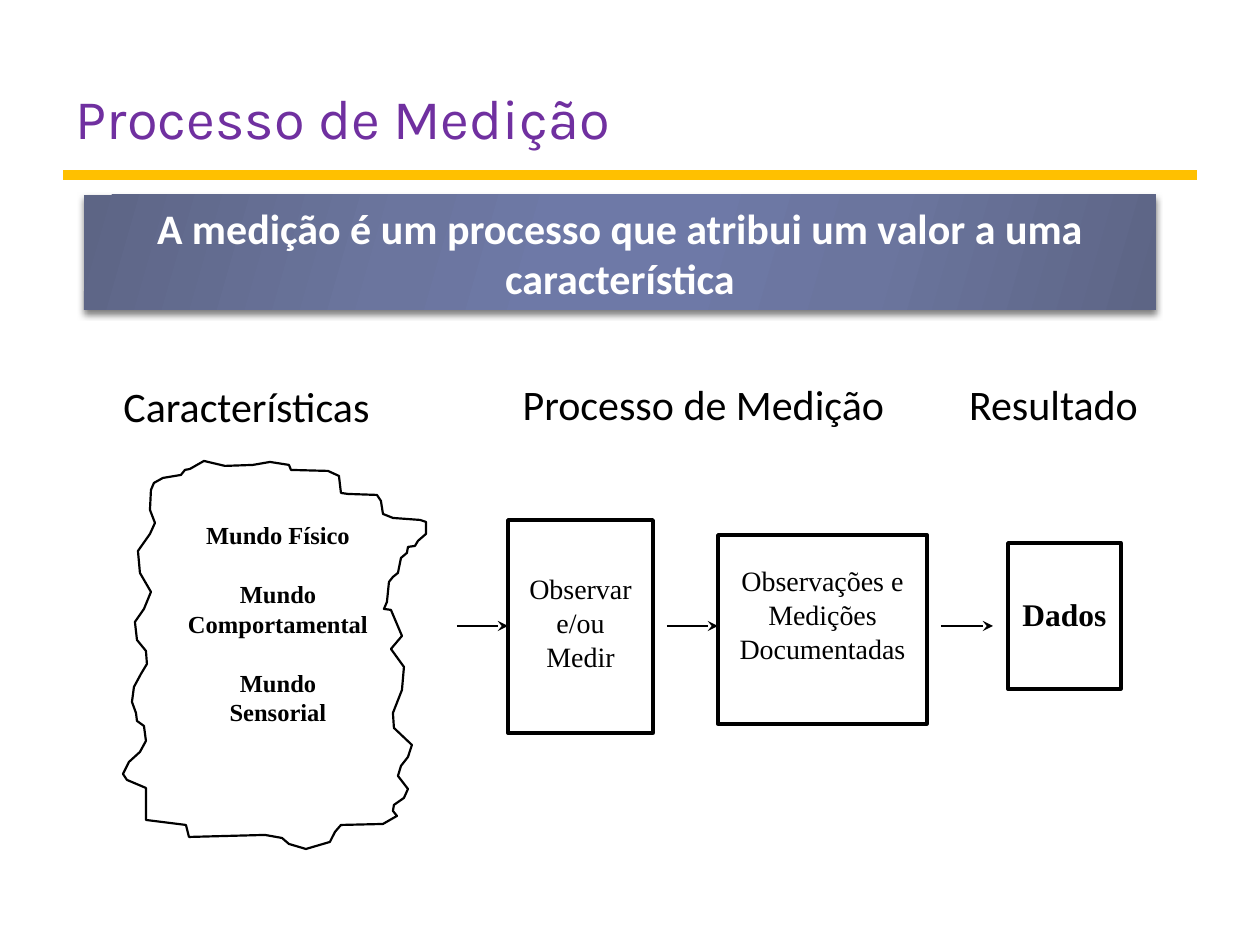
"""Build the slide "Processo de Medição": a diagram from characteristics to data."""
from lxml.etree import SubElement
from pptx import Presentation
from pptx.dml.color import RGBColor
from pptx.enum.shapes import MSO_CONNECTOR, MSO_SHAPE
from pptx.enum.text import MSO_ANCHOR, PP_ALIGN
from pptx.oxml import parse_xml
from pptx.oxml.ns import nsdecls, qn
from pptx.util import Emu, Pt


def px(length):
    return Emu(round(length * 914400 / 126))


def write(shape, lines, size, font, color="000000", bold=False, align=PP_ALIGN.CENTER,
          anchor=MSO_ANCHOR.TOP, top=6, gaps=()):
    frame = shape.text_frame
    frame.word_wrap = True
    frame.vertical_anchor = anchor
    frame.margin_left = frame.margin_right = px(13)
    frame.margin_top, frame.margin_bottom = px(top), px(6)
    frame.text = "\n".join(lines)
    for index, paragraph in enumerate(frame.paragraphs):
        paragraph.alignment = align
        paragraph.font.size = Pt(size)
        paragraph.font.name = font
        paragraph.font.bold = bold
        paragraph.font.color.rgb = RGBColor.from_string(color)
        if index in gaps:
            paragraph.space_before = Pt(17)


presentation = Presentation()
presentation.slide_width, presentation.slide_height = px(1260), px(945)
slide = presentation.slides.add_slide(presentation.slide_layouts[6])
shapes = slide.shapes

title = shapes.add_textbox(px(63), px(31), px(1134), px(126))
write(title, ["Processo de Medição"], 32, "Karla", "7030A0",
      align=PP_ALIGN.LEFT, anchor=MSO_ANCHOR.BOTTOM)

OUTLINE = [
    (151, 490), (154, 483), (163, 478), (181, 475), (185, 470), (190, 469), (204, 461),
    (225, 466), (253, 465), (270, 462), (289, 465), (291, 470), (328, 471), (339, 476),
    (341, 493), (348, 494), (377, 495), (381, 501), (383, 514), (393, 518), (420, 520),
    (426, 522), (426, 534), (418, 541), (415, 546), (408, 547), (407, 553), (401, 558),
    (398, 573), (393, 577), (389, 582), (387, 602), (384, 609), (391, 610), (402, 636),
    (391, 649), (404, 667), (402, 690), (393, 713), (394, 728), (412, 745), (408, 757),
    (401, 766), (398, 776), (408, 789), (404, 798), (394, 805), (393, 811), (397, 816),
    (383, 824), (341, 825), (335, 832), (330, 842), (306, 849), (289, 844), (282, 838),
    (265, 835), (189, 837), (186, 825), (146, 820), (146, 788), (127, 780), (123, 774),
    (129, 762), (140, 752), (146, 741), (144, 726), (137, 721), (136, 713), (132, 702),
    (134, 687), (141, 674), (144, 669), (147, 664), (146, 651), (137, 640), (135, 622),
    (144, 609), (151, 592), (140, 573), (138, 551), (150, 534), (155, 523), (150, 510),
]
builder = shapes.build_freeform(*OUTLINE[0], scale=914400 / 126)
builder.add_line_segments(OUTLINE[1:], close=True)
world = builder.convert_to_shape()
world.shadow.inherit = False
world.fill.background()
world.line.color.rgb = RGBColor.from_string("000000")
world.line.width = Pt(1.25)

worlds = shapes.add_textbox(px(169), px(485), px(218), px(330))
write(worlds, ["Mundo Físico", "Mundo", "Comportamental", "Mundo", "Sensorial"],
      14, "Times New Roman", bold=True, top=35, gaps=(1, 3))

for left, top, width, height, text, size, bold, inset in [
    (508, 520, 145, 213, "Observar e/ou Medir", 16, False, 52),
    (718, 535, 209, 189, "Observações e Medições Documentadas", 16, False, 29),
    (1008, 543, 113, 146, "Dados", 18, True, 52),
]:
    step = shapes.add_shape(MSO_SHAPE.RECTANGLE, px(left), px(top), px(width), px(height))
    step.shadow.inherit = False
    step.fill.solid()
    step.fill.fore_color.rgb = RGBColor.from_string("FFFFFF")
    step.line.color.rgb = RGBColor.from_string("000000")
    step.line.width = Pt(2)
    write(step, [text], size, "Times New Roman", bold=bold, top=inset)

for start, end, y, color, width, arrow in [
    (63, 1197, 175, "FFC000", 6, False),
    (457, 508, 626, "000000", 1.25, True),
    (667, 718, 626, "000000", 1.25, True),
    (941, 993, 626, "000000", 1.25, True),
]:
    connector = shapes.add_connector(MSO_CONNECTOR.STRAIGHT, px(start), px(y), px(end), px(y))
    connector.line.color.rgb = RGBColor.from_string(color)
    connector.line.width = Pt(width)
    if arrow:
        SubElement(connector.line._get_or_add_ln(), qn("a:tailEnd"), type="stealth")
    SubElement(connector._element.spPr, qn("a:effectLst"))

banner = shapes.add_shape(MSO_SHAPE.RECTANGLE, px(84), px(195), px(1072), px(115))
banner.line.fill.background()
banner.shadow.inherit = False
stops = "".join(
    f'<a:gs pos="{position * 1000}"><a:srgbClr val="{color}"/></a:gs>'
    for position, color in [(0, "5D6585"), (30, "6B759E"), (45, "6E79A7"),
                            (55, "6E79A7"), (73, "6B759E"), (100, "5D6585")])
properties = banner._element.spPr
properties.find(qn("a:prstGeom")).addnext(parse_xml(
    f'<a:gradFill {nsdecls("a")} rotWithShape="1"><a:gsLst>{stops}</a:gsLst>'
    f'<a:lin ang="{16 * 60000}" scaled="0"/></a:gradFill>'))
properties.find(qn("a:effectLst")).append(parse_xml(
    f'<a:outerShdw {nsdecls("a")} blurRad="{Pt(4)}" dist="{Pt(2)}" dir="5400000" '
    'rotWithShape="0"><a:srgbClr val="000000"><a:alpha val="50000"/></a:srgbClr></a:outerShdw>'))
write(banner, ["A medição é um processo que atribui um valor a uma característica"],
      24, "Calibri", "FFFFFF", bold=True, anchor=MSO_ANCHOR.MIDDLE)

for left, top, width, text in [
    (105, 375, 283, "Características"),
    (495, 373, 417, "Processo de Medição"),
    (912, 373, 283, "Resultado"),
]:
    heading = shapes.add_textbox(px(left), px(top), px(width), px(63))
    write(heading, [text], 24, "Calibri")

presentation.save("out.pptx")
